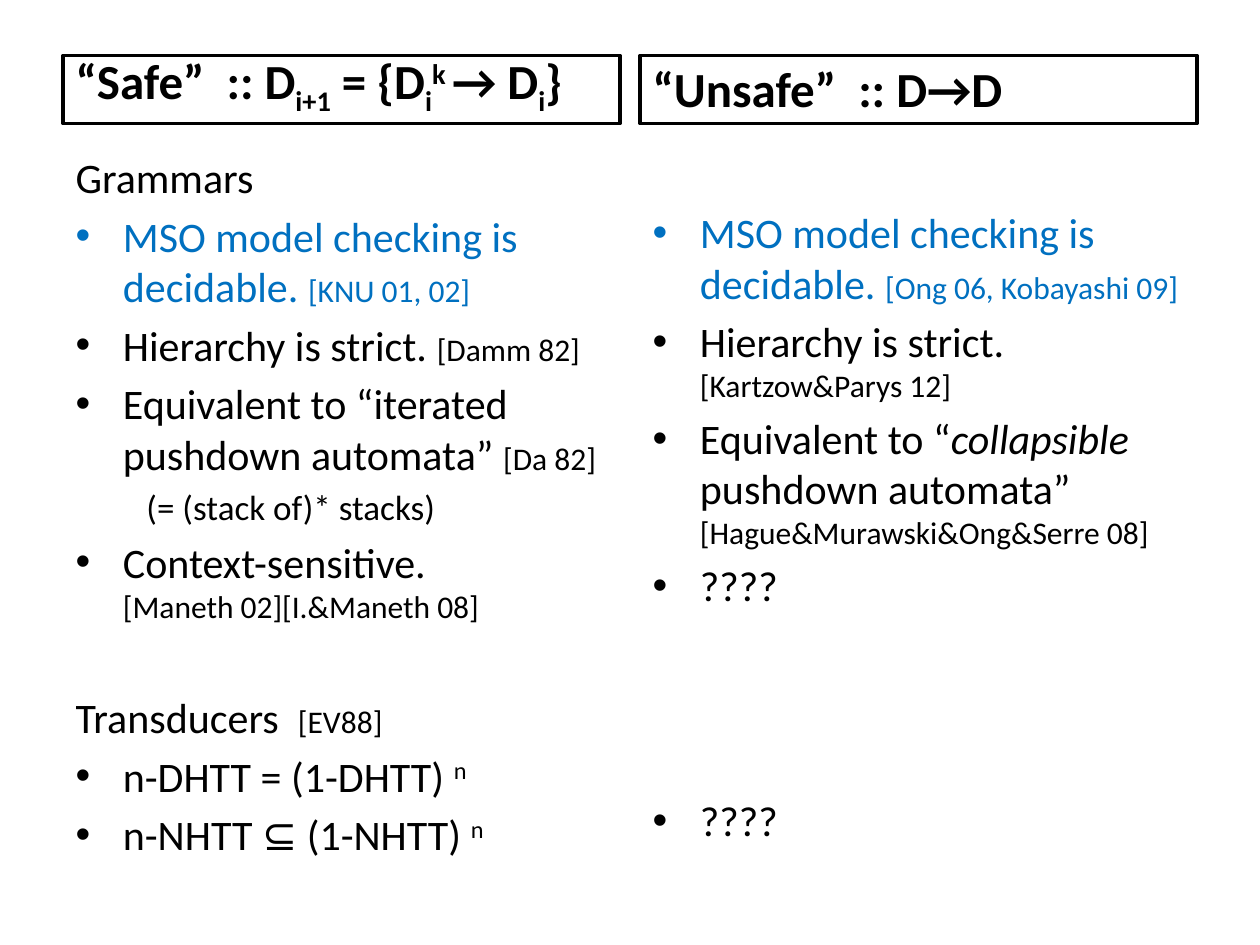
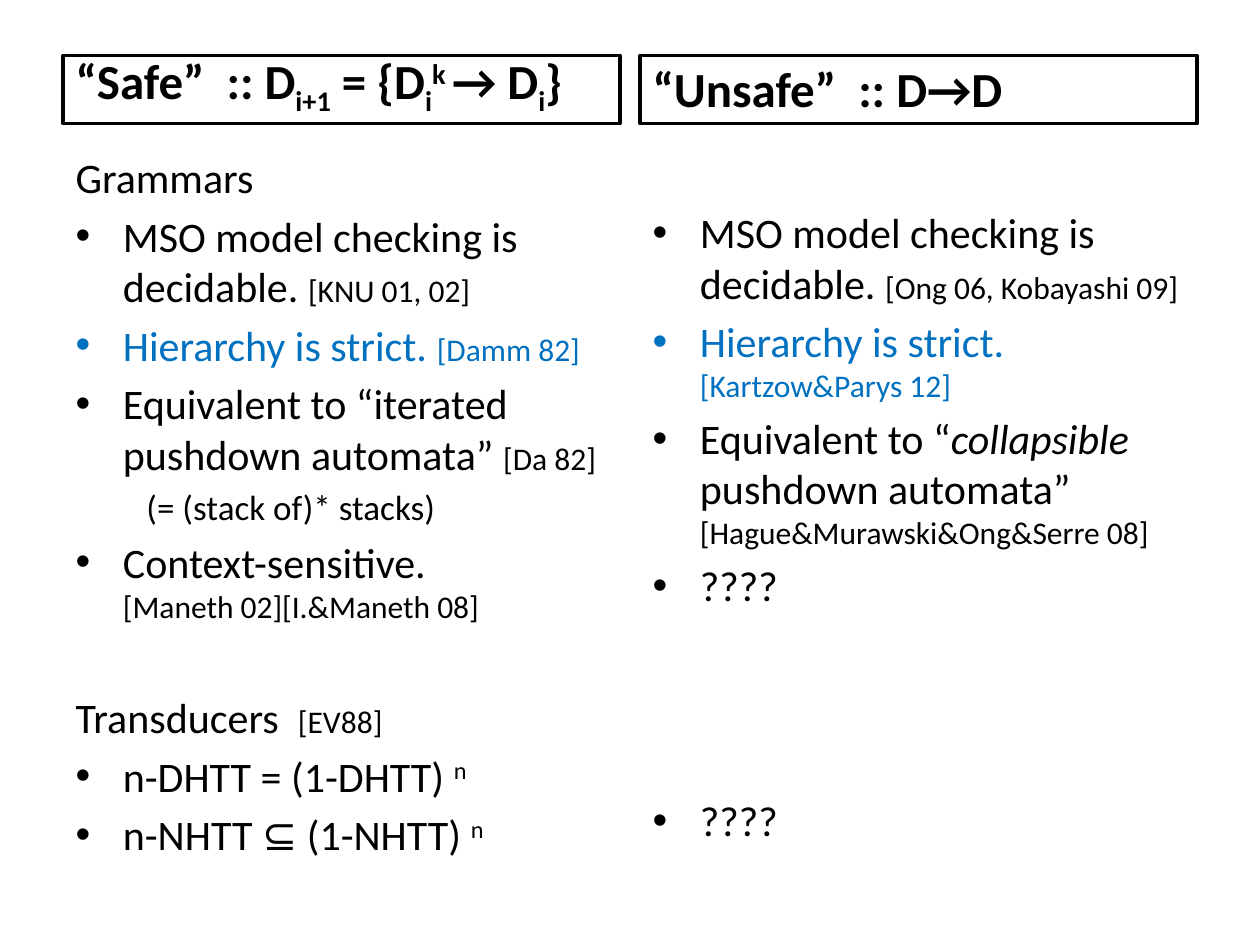
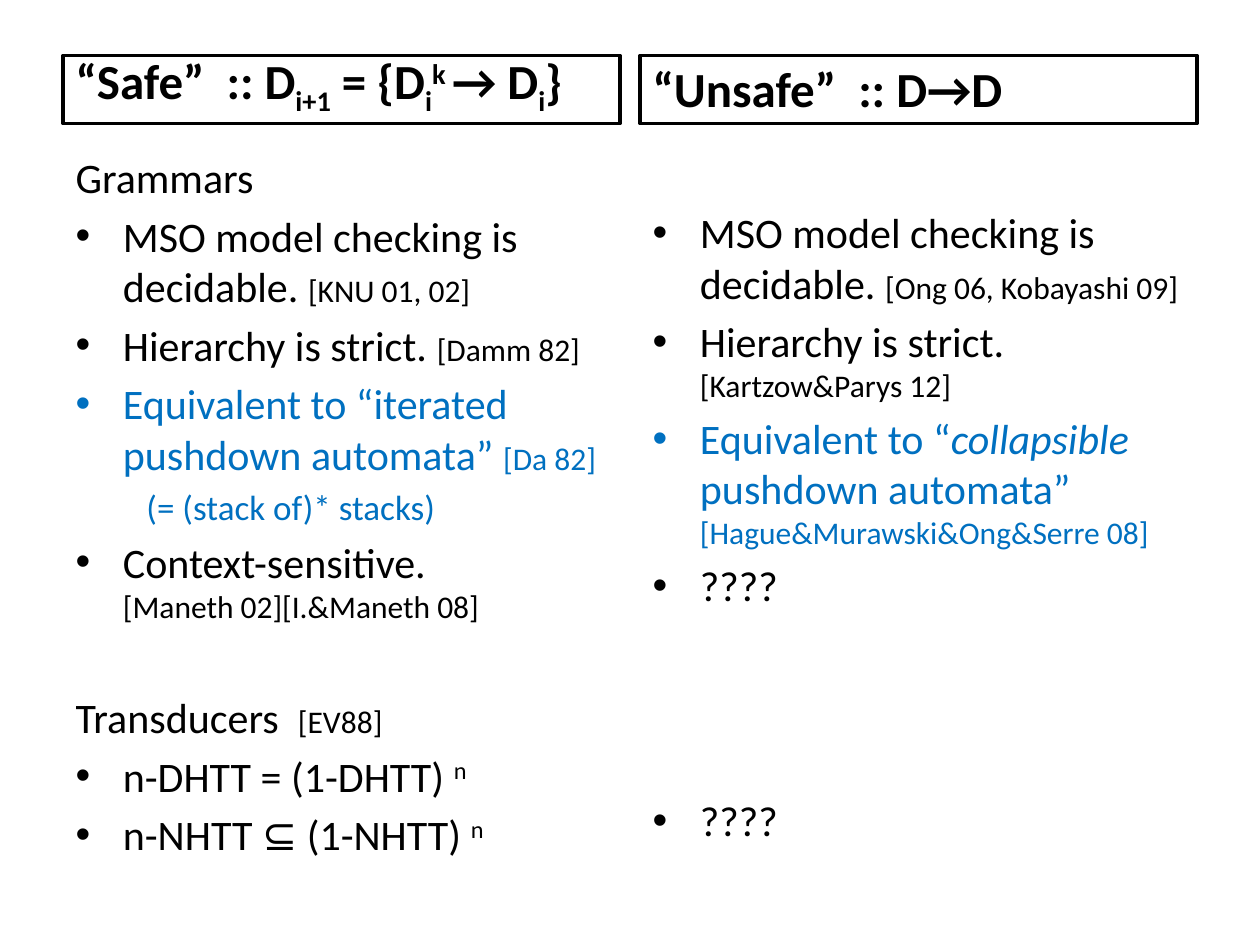
from pptx import Presentation
from pptx import util as u
from pptx.dml.color import RGBColor
from pptx.enum import text
from pptx.oxml.ns import qn

PX = 9144
BLACK = RGBColor(0x00, 0x00, 0x00)
WHITE = RGBColor(0xFF, 0xFF, 0xFF)
BLUE = RGBColor(0x00, 0x70, 0xC0)
FONT = "Calibri"
LEFT, RIGHT, WIDTH = 50, 508, 442


def ref(words):
    return words, {"size": 18}


def sub(words):
    return words, {"base": -25}


def sup(words):
    return words, {"base": 30}


def row(*runs, kind="item", topic=0, gap=None):
    return runs, kind, topic, gap


SAFE = ["“Safe”  :: D", sub("i+1"), " = {D", sub("i"), sup("k "), "→ D", sub("i"), "}"]
UNSAFE = ["“Unsafe”  :: D→D"]

KNOWN = [
    row("Grammars", kind="head"),
    row("MSO model checking is decidable. ", ref("[KNU 01, 02]"), topic=1),
    row("Hierarchy is strict. ", ref("[Damm 82]"), topic=2),
    row("Equivalent to “iterated pushdown automata” ", ref("[Da 82]"), topic=3),
    row((" (= (stack of)* stacks)", {"size": 20}), kind="note", topic=3),
    row("Context-sensitive.", "\n", ref("[Maneth 02][I.&Maneth 08]")),
    row("Transducers  ", ref("[EV88]"), kind="head", gap=38.2),
    row("n-DHTT = (1-DHTT) ", sup("n")),
    row("n-NHTT ⊆ (1-NHTT) ", sup("n")),
]
OPEN = [
    row("MSO model checking is decidable. ", ref("[Ong 06, Kobayashi 09]"), topic=1),
    row("Hierarchy is strict. ", ref("[Kartzow&Parys 12]"), topic=2),
    row("Equivalent to “", ("collapsible", {"slant": True}), " pushdown automata” ",
        ref("[Hague&Murawski&Ong&Serre 08]"), topic=3),
    row("????"),
    row("????", gap=105.6),
]


class Deck:
    def __init__(self):
        self.prs = Presentation()
        self.prs.slide_width = 1000 * PX
        self.prs.slide_height = 750 * PX
        self.slide = None

    def page(self):
        self.slide = self.prs.slides.add_slide(self.prs.slide_layouts.get_by_name("Comparison"))
        title = self.slide.shapes.title.element
        title.getparent().remove(title)

    def place(self, slot, x, y, w, h):
        box = self.slide.placeholders[slot]
        box.left, box.top, box.width, box.height = (n * PX for n in (x, y, w, h))
        box.text_frame.word_wrap = True
        box.text_frame.auto_size = text.MSO_AUTO_SIZE.NONE
        return box

    def fill_in(self, para, runs, size, color=BLACK, bold=False):
        for part in runs:
            if part == "\n":
                para.add_line_break()
                continue
            words, look = (part, {}) if isinstance(part, str) else part
            run = para.add_run()
            run.text = words
            font = run.font
            font.name, font.bold = FONT, bold
            font.size = u.Pt(look.get("size", size))
            font.color.rgb = color
            if "slant" in look:
                font.italic = True
            if "base" in look:
                run._r.get_or_add_rPr().set("baseline", str(look["base"] * 1000))

    def header(self, slot, x, runs):
        box = self.place(slot, x, 44, WIDTH, 54)
        box.fill.solid()
        box.fill.fore_color.rgb = WHITE
        box.line.color.rgb = BLACK
        box.line.width = u.Pt(2)
        box.text_frame.vertical_anchor = text.MSO_ANCHOR.BOTTOM
        self.fill_in(box.text_frame.paragraphs[0], runs, 28, bold=True)

    def column(self, slot, x, y, rows, topic, inset=5):
        frame = self.place(slot, x, y, WIDTH, 555).text_frame
        frame.margin_top = inset * PX
        for i, (runs, kind, mark, gap) in enumerate(rows):
            para = frame.add_paragraph() if i else frame.paragraphs[0]
            if kind != "item":
                self.plain(para, kind)
            if gap:
                para.space_before = u.Pt(gap)
            self.fill_in(para, runs, 24, BLUE if mark == topic else BLACK)

    def plain(self, para, kind):
        if kind == "note":
            para.level = 1
        props = para._p.get_or_add_pPr()
        props.set("marL", str(50 * PX if kind == "note" else 0))
        props.set("indent", "0")
        props.append(props.makeelement(qn("a:buNone"), {}))


def main():
    deck = Deck()
    for topic in (1, 2, 3):
        deck.page()
        deck.header(1, LEFT, SAFE)
        deck.column(2, LEFT, 115, KNOWN, topic)
        deck.header(3, RIGHT, UNSAFE)
        deck.column(4, RIGHT, 112, OPEN, topic, inset=52)
    deck.prs.save("out.pptx")


if __name__ == "__main__":
    main()
